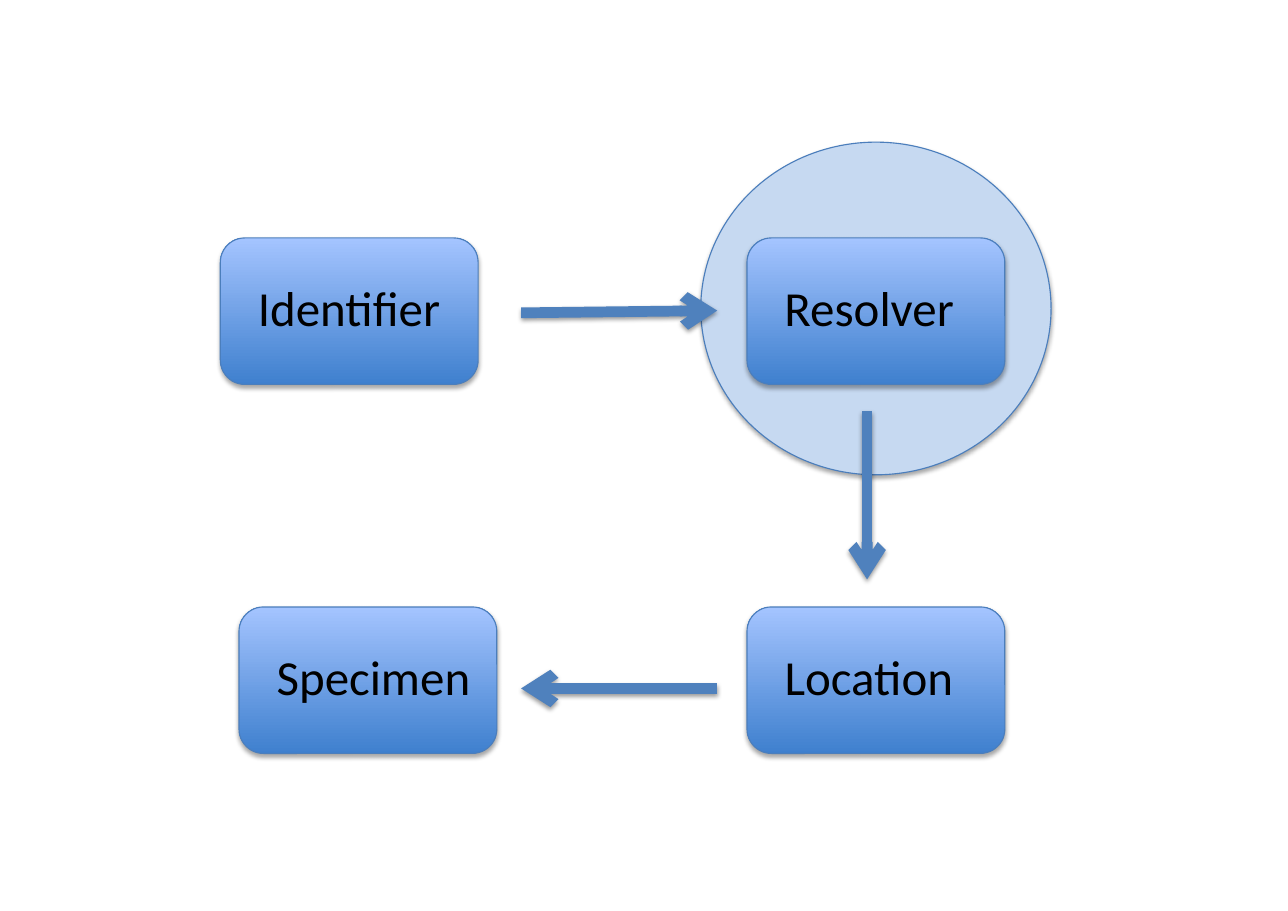
from lxml import etree
from pptx import Presentation
from pptx.dml.color import RGBColor
from pptx.enum.shapes import MSO_CONNECTOR, MSO_SHAPE
from pptx.enum.text import MSO_AUTO_SIZE
from pptx.oxml.ns import qn
from pptx.util import Inches, Pt

OVAL, ROUND = MSO_SHAPE.OVAL, MSO_SHAPE.ROUNDED_RECTANGLE
STRAIGHT = MSO_CONNECTOR.STRAIGHT
GROW = MSO_AUTO_SIZE.SHAPE_TO_FIT_TEXT

WIDE, HIGH = Inches(11.69), Inches(8.27)
HUES = {"halo": "C6D9F1", "edge": "4B7EBC", "low": "3F80CE",
        "top": "A4C4FF", "arrow": "4F81BD", "text": "000000",
        "shade": "000000"}

# Positions and sizes are percent of the slide's width and height.
LEFT, INSET, RIGHT = 17.11, 18.56, 58
UPPER, LOWER = 26.12, 66.63
BOX = 20.02, 16.08
PAD = 2.07, 3.7
TEXT_HIGH = 7.74
HALO = 54.41, 15.6, 27.2, 36.52
NODES = [("Identifier", LEFT, UPPER, 16.42),
         ("Resolver", RIGHT, UPPER, 15.48),
         ("Location", RIGHT, LOWER, 15.4),
         ("Specimen", INSET, LOWER, 17.28)]
NEAR, FAR, DOWN = 40.46, 55.69, 67.32
ARROWS = [(NEAR, 34.34, FAR, 34.1),
          (DOWN, 45.1, DOWN, 63.6),
          (FAR, 75.57, NEAR, 75.57)]


def rgb(name):
    return RGBColor.from_string(HUES[name])


def place(x, y, *rest):
    """Turn alternating across and down percents into lengths."""
    sides = (WIDE, HIGH, WIDE, HIGH)
    return [round(side * part / 100)
            for side, part in zip(sides, (x, y, *rest))]


def add_shade(shape, dist, alpha):
    """Drop a soft shadow straight below; call after fill and line are set."""
    props = shape._element.spPr
    effects = etree.SubElement(props, qn("a:effectLst"))
    drop = etree.SubElement(effects, qn("a:outerShdw"), blurRad=str(Pt(3.1)),
                            dist=str(Pt(dist)), dir="5400000", rotWithShape="0")
    hue = etree.SubElement(drop, qn("a:srgbClr"), val=HUES["shade"])
    etree.SubElement(hue, qn("a:alpha"), val=str(alpha * 1000))


def add_form(slide, kind, area, *hues):
    """Draw a shape with one solid hue, or a gradient from low to top."""
    shape = slide.shapes.add_shape(kind, *place(*area))
    if len(hues) == 1:
        shape.fill.solid()
        shape.fill.fore_color.rgb = rgb(hues[0])
    else:
        shape.fill.gradient()
        shape.fill.gradient_angle = 90
        for stop, hue in zip(shape.fill.gradient_stops, hues):
            stop.color.rgb = rgb(hue)
    shape.line.color.rgb = rgb("edge")
    shape.line.width = Pt(0.75)
    add_shade(shape, dist=1.8, alpha=35)


def add_text(slide, text, area, size=32, font="Calibri", hue="text"):
    frame = slide.shapes.add_textbox(*place(*area)).text_frame
    frame.word_wrap = False
    frame.auto_size = GROW
    run = frame.paragraphs[0].add_run()
    run.text = text
    run.font.size = Pt(size)
    run.font.name = font
    run.font.color.rgb = rgb(hue)


def add_node(slide, text, x, y, width):
    add_form(slide, ROUND, (x, y, *BOX), "low", "top")
    add_text(slide, text, (x + PAD[0], y + PAD[1], width, TEXT_HIGH))


def add_arrow(slide, ends):
    arrow = slide.shapes.add_connector(STRAIGHT, *place(*ends))
    arrow.line.color.rgb = rgb("arrow")
    arrow.line.width = Pt(7)
    etree.SubElement(arrow.line._get_or_add_ln(), qn("a:tailEnd"), type="arrow")
    add_shade(arrow, dist=1.6, alpha=38)


def main():
    deck = Presentation()
    deck.slide_width, deck.slide_height = WIDE, HIGH
    slide = deck.slides.add_slide(deck.slide_layouts[6])
    add_form(slide, OVAL, HALO, "halo")
    for node in NODES:
        add_node(slide, *node)
    for ends in ARROWS:
        add_arrow(slide, ends)
    deck.save("out.pptx")


if __name__ == "__main__":
    main()
